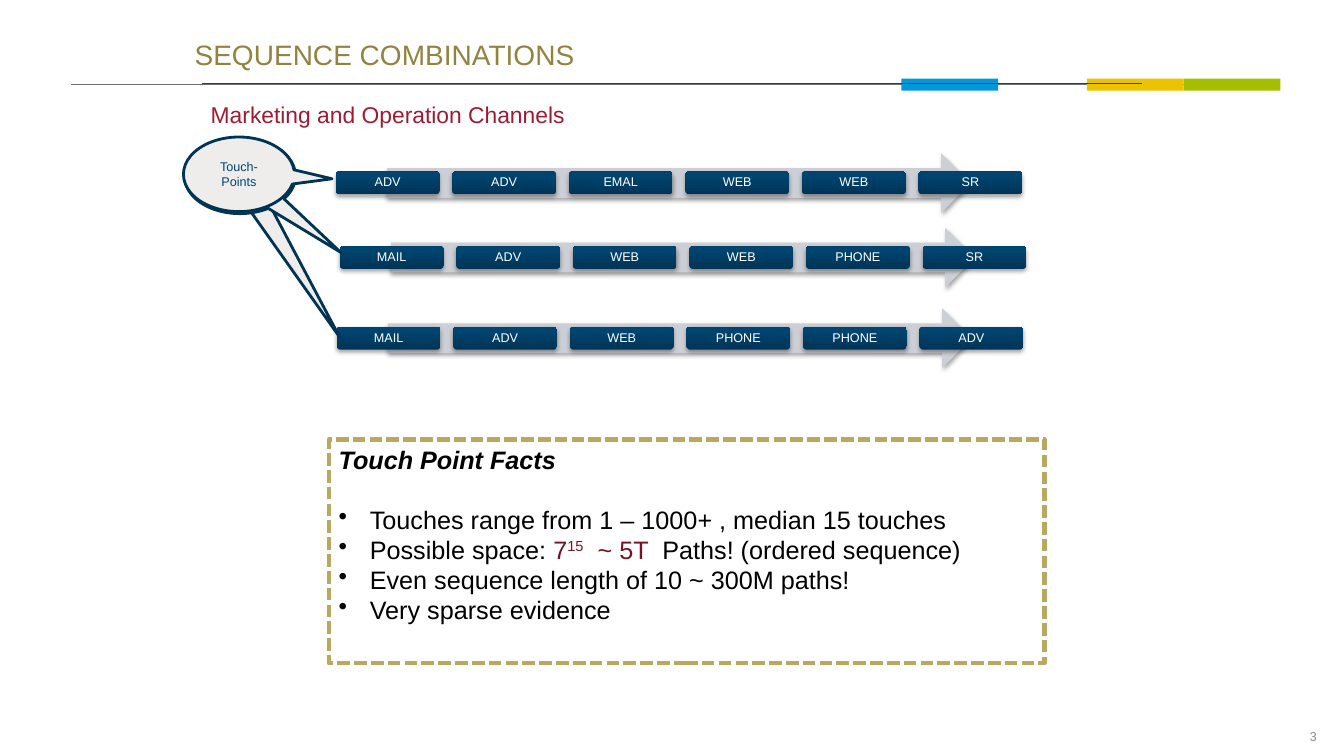
from dataclasses import dataclass

import lxml.etree
import pptx
import pptx.dml.color
import pptx.enum.dml
import pptx.enum.shapes
import pptx.enum.text
import pptx.oxml
import pptx.oxml.ns
import pptx.util

Inches = pptx.util.Inches
Pt = pptx.util.Pt
Shapes = pptx.enum.shapes.MSO_SHAPE
Align = pptx.enum.text.PP_ALIGN
Anchor = pptx.enum.text.MSO_ANCHOR


@dataclass(frozen=True)
class Theme:
    font: str = "Arial"
    number_font: str = "Roboto"
    title: str = "918340"
    subtitle: str = "9E1B34"
    emphasis: str = "761427"
    text: str = "000000"
    white: str = "FFFFFF"
    number: str = "8C8C8C"
    master_rule: str = "6C6F70"
    title_rule: str = "96151D"
    facts_border: str = "B8A95E"
    arrow: str = "CCCFD5"
    chip_bottom: str = "003456"
    chip_top: str = "00446F"
    callout_fill: str = "EEEDEB"
    callout_line: str = "003455"
    callout_text: str = "004673"
    title_size: float = 20
    subtitle_size: float = 16.3
    facts_size: float = 18
    small_size: float = 9


@dataclass(frozen=True)
class Box:
    left: float
    top: float
    width: float
    height: float

    def lengths(self) -> tuple:
        return tuple(Inches(v) for v in (self.left, self.top, self.width, self.height))


@dataclass(frozen=True)
class Route:
    left: float
    top: float
    channels: tuple[str, ...]


@dataclass(frozen=True)
class Callout:
    left: float
    top: float
    tip_x: float
    tip_y: float


@dataclass(frozen=True)
class Rule:
    left: float
    right: float
    top: float
    color: str
    weight: float


THEME = Theme()
ROUTES = (
    Route(3.33, 1.7, ("ADV", "ADV", "EMAL", "WEB", "WEB", "SR")),
    Route(3.37, 2.44, ("MAIL", "ADV", "WEB", "WEB", "PHONE", "SR")),
    Route(3.34, 3.24, ("MAIL", "ADV", "WEB", "PHONE", "PHONE", "ADV")),
)
CHIP_SPAN = 5.78
CALLOUTS = (
    Callout(1.83, 1.37, 0.9, 2.17),
    Callout(1.83, 1.38, 0.91, 1.02),
    Callout(1.82, 1.36, 0.84, 0.06),
)
ACCENTS = ((11.74, "A6BE00"), (10.78, "EBC300"), (8.94, "0098DB"))
MASTER_RULE = Rule(0.7, 12.67, 0.84, THEME.master_rule, 1)
TITLE_RULE = Rule(2, 11.33, 0.83, THEME.title_rule, 0.75)
FACTS = (
    ("Touches range from 1 – 1000+ , median 15 touches",),
    ("Possible space: ", "7", "15", "  ~ 5T  ", "Paths! (ordered sequence)"),
    ("Even sequence length of 10 ~ 300M paths!",),
    ("Very sparse evidence",),
)


def rgb(color: str) -> pptx.dml.color.RGBColor:
    return pptx.dml.color.RGBColor.from_string(color)


def format_runs(paragraph, size: float, color: str, font: str = THEME.font) -> None:
    for run in paragraph.runs:
        run.font.name = font
        run.font.size = Pt(size)
        run.font.color.rgb = rgb(color)


def write(shape, text: str, size: float, color: str, align=Align.LEFT,
          anchor=Anchor.TOP, inset: float | None = None, font: str = THEME.font):
    frame = shape.text_frame
    frame.text = text
    frame.word_wrap = True
    frame.auto_size = pptx.enum.text.MSO_AUTO_SIZE.NONE
    frame.vertical_anchor = anchor
    if inset is not None:
        frame.margin_left = frame.margin_right = Inches(inset)
        frame.margin_top = frame.margin_bottom = Inches(inset)
    paragraph = frame.paragraphs[0]
    paragraph.alignment = align
    format_runs(paragraph, size, color, font)
    return paragraph


def add_shape(slide, kind, box: Box, fill: str | None = None):
    shape = slide.shapes.add_shape(kind, *box.lengths())
    shape.shadow.inherit = False
    shape.line.fill.background()
    if fill:
        shape.fill.solid()
        shape.fill.fore_color.rgb = rgb(fill)
    else:
        shape.fill.background()
    return shape


def add_drop_shadow(shape) -> None:
    effects = shape._element.spPr.find(pptx.oxml.ns.qn("a:effectLst"))
    effects.append(pptx.oxml.parse_xml(
        f'<a:outerShdw {pptx.oxml.ns.nsdecls("a")} blurRad="{Pt(3.1)}" dist="{Pt(1.8)}" '
        'dir="5400000" rotWithShape="0"><a:srgbClr val="000000">'
        '<a:alpha val="35000"/></a:srgbClr></a:outerShdw>'))


def add_rule(slide, rule: Rule) -> None:
    line = slide.shapes.add_connector(
        pptx.enum.shapes.MSO_CONNECTOR.STRAIGHT,
        Inches(rule.left), Inches(rule.top), Inches(rule.right), Inches(rule.top))
    line.line.color.rgb = rgb(rule.color)
    line.line.width = Pt(rule.weight)
    lxml.etree.SubElement(line._element.spPr, pptx.oxml.ns.qn("a:effectLst"))


def add_route(slide, route: Route) -> None:
    arrow_box = Box(route.left + 0.51, route.top - 0.18, 5.79, 0.59)
    add_drop_shadow(add_shape(slide, Shapes.RIGHT_ARROW, arrow_box, THEME.arrow))
    step = CHIP_SPAN / (len(route.channels) - 1)
    for index, channel in enumerate(route.channels):
        box = Box(route.left + index * step, route.top, 1.03, 0.23)
        chip = add_shape(slide, Shapes.ROUNDED_RECTANGLE, box)
        chip.fill.gradient()
        chip.fill.gradient_angle = 90
        stops = ((0, THEME.chip_bottom), (0.8, THEME.chip_top))
        for stop, (position, color) in zip(chip.fill.gradient_stops, stops):
            stop.position = position
            stop.color.rgb = rgb(color)
        add_drop_shadow(chip)
        paragraph = write(chip, channel, THEME.small_size, THEME.white,
                          Align.CENTER, Anchor.MIDDLE, 0.04)
        paragraph.line_spacing = 0.9


def add_callout(slide, callout: Callout) -> None:
    box = Box(callout.left, callout.top, 1.1, 0.74)
    shape = add_shape(slide, Shapes.OVAL_CALLOUT, box, THEME.callout_fill)
    shape.adjustments[0] = callout.tip_x
    shape.adjustments[1] = callout.tip_y
    shape.line.color.rgb = rgb(THEME.callout_line)
    shape.line.width = Pt(2)
    write(shape, "Touch-Points", THEME.small_size, THEME.callout_text,
          Align.CENTER, Anchor.MIDDLE)


def add_facts(slide) -> None:
    panel = add_shape(slide, Shapes.RECTANGLE, Box(3.26, 4.36, 7.1, 2.22))
    panel.line.color.rgb = rgb(THEME.facts_border)
    panel.line.width = Pt(3)
    panel.line.dash_style = pptx.enum.dml.MSO_LINE.SQUARE_DOT
    panel.line._ln.find(pptx.oxml.ns.qn("a:prstDash")).set("val", "sysDash")
    heading = write(panel, "Touch Point Facts", THEME.facts_size, THEME.text)
    heading.runs[0].font.bold = heading.runs[0].font.italic = True
    heading.space_after = Pt(21)
    for parts in FACTS:
        paragraph = panel.text_frame.add_paragraph()
        paragraph.alignment = Align.LEFT
        for part in parts:
            paragraph.add_run().text = part
        format_runs(paragraph, THEME.facts_size, THEME.text)
        for run in paragraph.runs[1:4]:
            run.font.color.rgb = rgb(THEME.emphasis)
        for run in paragraph.runs[2:3]:
            run.font._element.set("baseline", "30000")
        properties = paragraph._p.get_or_add_pPr()
        properties.set("marL", str(Inches(0.31)))
        properties.set("indent", str(-Inches(0.31)))
        lxml.etree.SubElement(properties, pptx.oxml.ns.qn("a:buChar")).set("char", "•")


def main() -> None:
    presentation = pptx.Presentation()
    presentation.slide_width, presentation.slide_height = Inches(13.33), Inches(7.5)
    slide = presentation.slides.add_slide(presentation.slide_layouts[5])
    title = slide.shapes.title
    title.left, title.top, title.width, title.height = Box(1.83, 0.32, 8.08, 0.44).lengths()
    write(title, "SEQUENCE COMBINATIONS", THEME.title_size, THEME.title)
    number = slide.shapes.add_textbox(*Box(10.16, 7.16, 3, 0.3).lengths())
    write(number, "3", THEME.small_size, THEME.number, Align.RIGHT, Anchor.MIDDLE,
          font=THEME.number_font)
    add_rule(slide, MASTER_RULE)
    for left, color in ACCENTS:
        add_shape(slide, Shapes.RECTANGLE, Box(left, 0.78, 0.96, 0.12), color)
    add_facts(slide)
    add_rule(slide, TITLE_RULE)
    subtitle = slide.shapes.add_textbox(*Box(2.09, 1, 8.27, 0.27).lengths())
    write(subtitle, "Marketing and Operation Channels", THEME.subtitle_size,
          THEME.subtitle, inset=0)
    for route in ROUTES:
        add_route(slide, route)
    for callout in CALLOUTS:
        add_callout(slide, callout)
    presentation.save("out.pptx")


if __name__ == "__main__":
    main()
